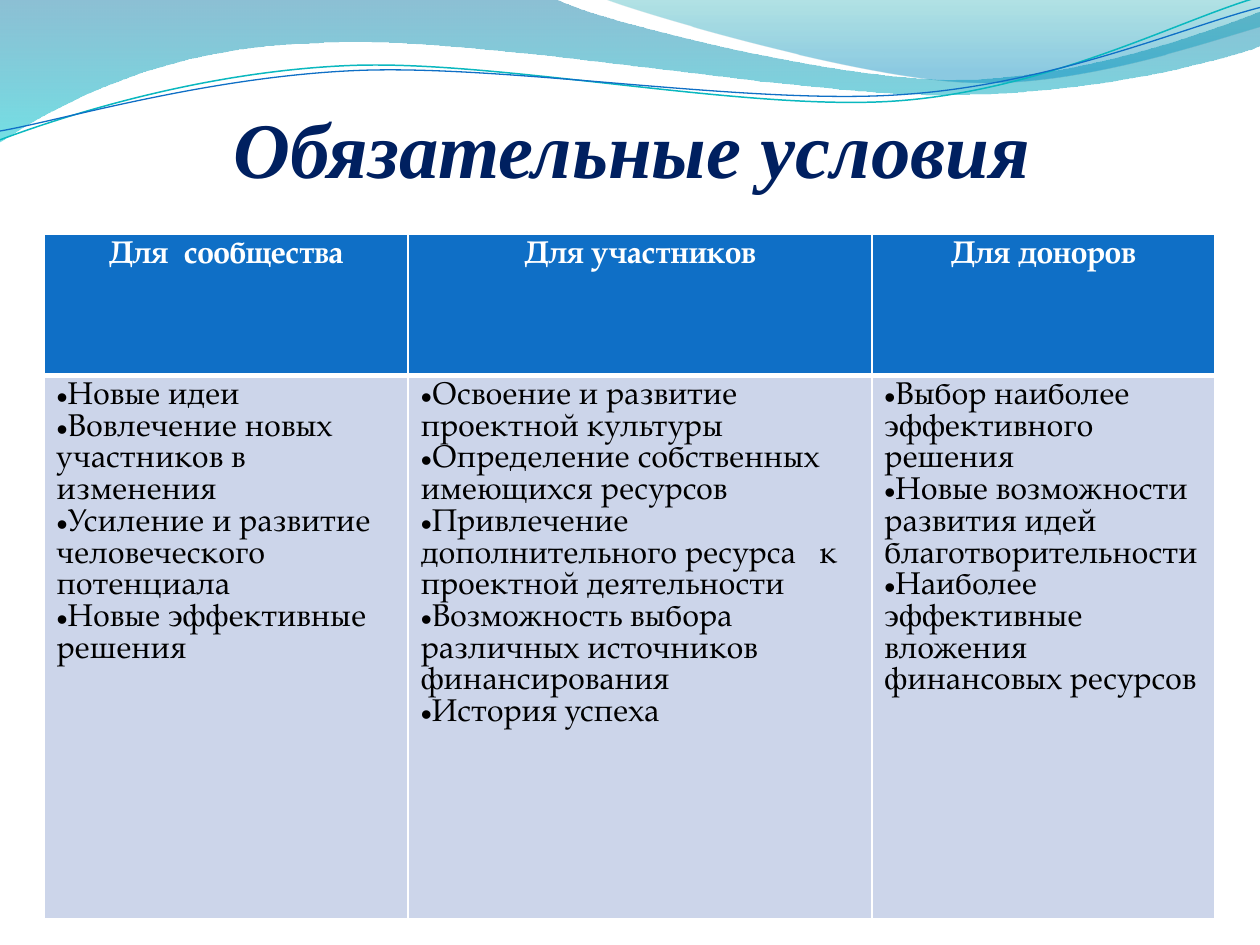
import math

import pptx
import pptx.dml.color
import pptx.enum.text
import pptx.oxml.ns
import pptx.util
from lxml import etree

Inches, Pt = pptx.util.Inches, pptx.util.Pt
qn = pptx.oxml.ns.qn
CENTER = pptx.enum.text.PP_ALIGN.CENTER
BODY_FONT = "TeX Gyre Pagella"
LINE_TILT = -2.7

BAND = [("L", 0, 0), ("L", 4.4, -0.01),
        ("C", 4.76, 0.17, 6.64, 0.63, 7.58, 0.63),
        ("C", 8.53, 0.63, 9.58, 0.26, 10, 0.09), ("L", 10.01, 0.36),
        ("C", 9.83, 0.44, 8.7, 0.76, 7.46, 0.75),
        ("C", 6.22, 0.75, 3.82, 0.28, 2.57, 0.34),
        ("C", 1.29, 0.36, 0.46, 0.83, -0.01, 1.13), ("L", 0, 0)]
CREST = [("L", 4.79, -0.01), ("C", 5.09, 0.11, 6.82, 0.62, 7.69, 0.65),
         ("C", 8.56, 0.69, 9.61, 0.32, 10, 0.21), ("L", 10, 0),
         ("L", 4.79, -0.01)]
TEAL_LINE = [("L", 0, 1.11), ("C", 0.48, 0.93, 1.58, 0.57, 2.77, 0.52),
             ("C", 3.95, 0.47, 5.93, 0.89, 7.13, 0.8),
             ("C", 8.33, 0.71, 9.38, 0.15, 9.98, -0.02)]
BLUE_LINE = [("L", 0, 1.04), ("C", 0.47, 0.96, 1.64, 0.61, 2.83, 0.56),
             ("C", 4.03, 0.51, 5.97, 0.84, 7.17, 0.75),
             ("C", 8.36, 0.67, 9.41, 0.21, 10, 0.06)]

COLUMNS = [
    (2.89, "Для  сообщества",
     ["Новые идеи", "Вовлечение новых участников в изменения",
      "Усиление и развитие человеческого потенциала",
      "Новые эффективные решения"]),
    (3.68, "Для участников",
     ["Освоение и развитие проектной культуры",
      "Определение собственных имеющихся ресурсов",
      "Привлечение дополнительного ресурса   к проектной деятельности",
      "Возможность выбора различных источников финансирования",
      "История успеха"]),
    (2.72, "Для доноров",
     ["Выбор наиболее эффективного решения",
      "Новые возможности развития идей благотворительности",
      "Наиболее  эффективные", "вложения финансовых ресурсов"]),
]
UNBULLETED = {"вложения финансовых ресурсов"}


def rgb(value):
    """Return the colour of a hex string."""
    return pptx.dml.color.RGBColor.from_string(value)


def turn(point, center, degrees):
    """Rotate a point clockwise about a center."""
    angle = math.radians(degrees)
    dx, dy = point[0] - center[0], point[1] - center[1]
    return (center[0] + dx * math.cos(angle) - dy * math.sin(angle),
            center[1] + dx * math.sin(angle) + dy * math.cos(angle))


def add_wave(shapes, box, segments, closed, center=(0, 0), tilt=0):
    """Draw one curved outline relative to the box, without fill or line."""
    points = [turn(pair, center, -tilt) for _, *c in segments
              for pair in zip(c[0::2], c[1::2])]
    points = [(Inches(box[0] + x), Inches(box[1] + y)) for x, y in points]
    builder = shapes.build_freeform(*points[0], scale=1.0)
    builder.add_line_segments(points[1:], close=closed)
    s = builder.convert_to_shape()
    lines = iter(list(s._element.iter(qn("a:lnTo"))))
    for kind, *_ in segments[1:]:
        line = next(lines)
        if kind == "C":
            line.tag = qn("a:cubicBezTo")
            for _ in range(2):
                extra = next(lines)
                line.append(extra[0])
                extra.getparent().remove(extra)
    s.rotation = tilt
    s.shadow.inherit = False
    s.fill.background()
    s.line.fill.background()
    return s


def add_waves(slide, box):
    """Draw the two shaded waves and the two thin lines of the header."""
    shaded = [(BAND, [(0, "0074A1", 45), (1, "00C6CF", 55)]),
              (CREST, [(0, "00A1A9", 30), (0.8, "008BBF", 45)])]
    for segments, stops in shaded:
        s = add_wave(slide.shapes, box, segments, True)
        s.fill.gradient()
        s.fill.gradient_angle = 270
        for stop, (position, color, _) in zip(s.fill.gradient_stops, stops):
            stop.position = position
            stop.color.rgb = rgb(color)
        colors = s._element.spPr.find(qn("a:gradFill")).iter(qn("a:srgbClr"))
        for element, (_, _, opacity) in zip(list(colors), stops):
            etree.SubElement(element, qn("a:alpha"), val=str(opacity * 1000))
    group = slide.shapes.add_group_shape()
    for segments, color, width, center in [
            (TEAL_LINE, "0AB8BF", 0.85, (4.99, 0.58)),
            (BLUE_LINE, "0F6FC6", 0.75, (5, 0.59))]:
        s = add_wave(group.shapes, box, segments, False, center, LINE_TILT)
        s.line.color.rgb = rgb(color)
        s.line.width = Pt(width)


def style_run(r, size, font, color, bold, italic=False):
    """Set the font of a run."""
    r.font.size, r.font.name = Pt(size), font
    r.font.bold, r.font.italic = bold, italic
    r.font.color.rgb = rgb(color)


def add_title(slide, box, text):
    """Place the centred title at the bottom of the box."""
    tf = slide.shapes.add_textbox(*map(Inches, box)).text_frame
    tf.word_wrap = True
    tf.vertical_anchor = pptx.enum.text.MSO_ANCHOR.BOTTOM
    tf.margin_left = tf.margin_right = tf.margin_bottom = 0
    tf.margin_top = Inches(0.05)
    tf.text = text
    p = tf.paragraphs[0]
    p.alignment = CENTER
    style_run(p.runs[0], 45, "Times New Roman", "002060", True, True)


def style_cell(cell, color, bottom, top):
    """Give a cell its fill and white borders."""
    tcPr = cell._tc.get_or_add_tcPr()
    for side, width in [("L", 1), ("R", 1), ("T", top), ("B", bottom)]:
        line = etree.SubElement(tcPr, qn(f"a:ln{side}"), w=str(Pt(width)))
        fill = etree.SubElement(line, qn("a:solidFill"))
        etree.SubElement(fill, qn("a:srgbClr"), val="FFFFFF")
    cell.fill.solid()
    cell.fill.fore_color.rgb = rgb(color)


def add_conditions(slide, box):
    """Build the table of conditions, one column for each group."""
    table = slide.shapes.add_table(2, len(COLUMNS), *map(Inches, box)).table
    header_height = 1.12
    table.rows[0].height = Inches(header_height)
    table.rows[1].height = Inches(box[3] - header_height)
    for i, (width, heading, items) in enumerate(COLUMNS):
        table.columns[i].width = Inches(width)
        head, body = table.cell(0, i), table.cell(1, i)
        style_cell(head, "0F6FC6", bottom=3, top=1)
        style_cell(body, "CCD5EA", bottom=1, top=3)
        head.text_frame.text = heading
        p = head.text_frame.paragraphs[0]
        p.alignment = CENTER
        style_run(p.runs[0], 18, BODY_FONT, "FFFFFF", True)
        body.text_frame.text = "\n".join(items)
        for p in body.text_frame.paragraphs:
            style_run(p.runs[0], 18, BODY_FONT, "000000", False)
            if p.text not in UNBULLETED:
                pPr = p._p.get_or_add_pPr()
                etree.SubElement(pPr, qn("a:buFont"), typeface="Arial")
                etree.SubElement(pPr, qn("a:buChar"), char="•")


def main():
    """Build and save the slide."""
    prs = pptx.Presentation()
    prs.slide_width, prs.slide_height = Inches(10), Inches(7.5)
    slide = prs.slides.add_slide(prs.slide_layouts[6])
    add_waves(slide, (0, 0, 10, 1.14))
    add_title(slide, (0.51, 0.52, 9.01, 1.02), "Обязательные условия")
    add_conditions(slide, (0.35, 1.86, 9.29, 5.43))
    prs.save("out.pptx")


if __name__ == "__main__":
    main()
